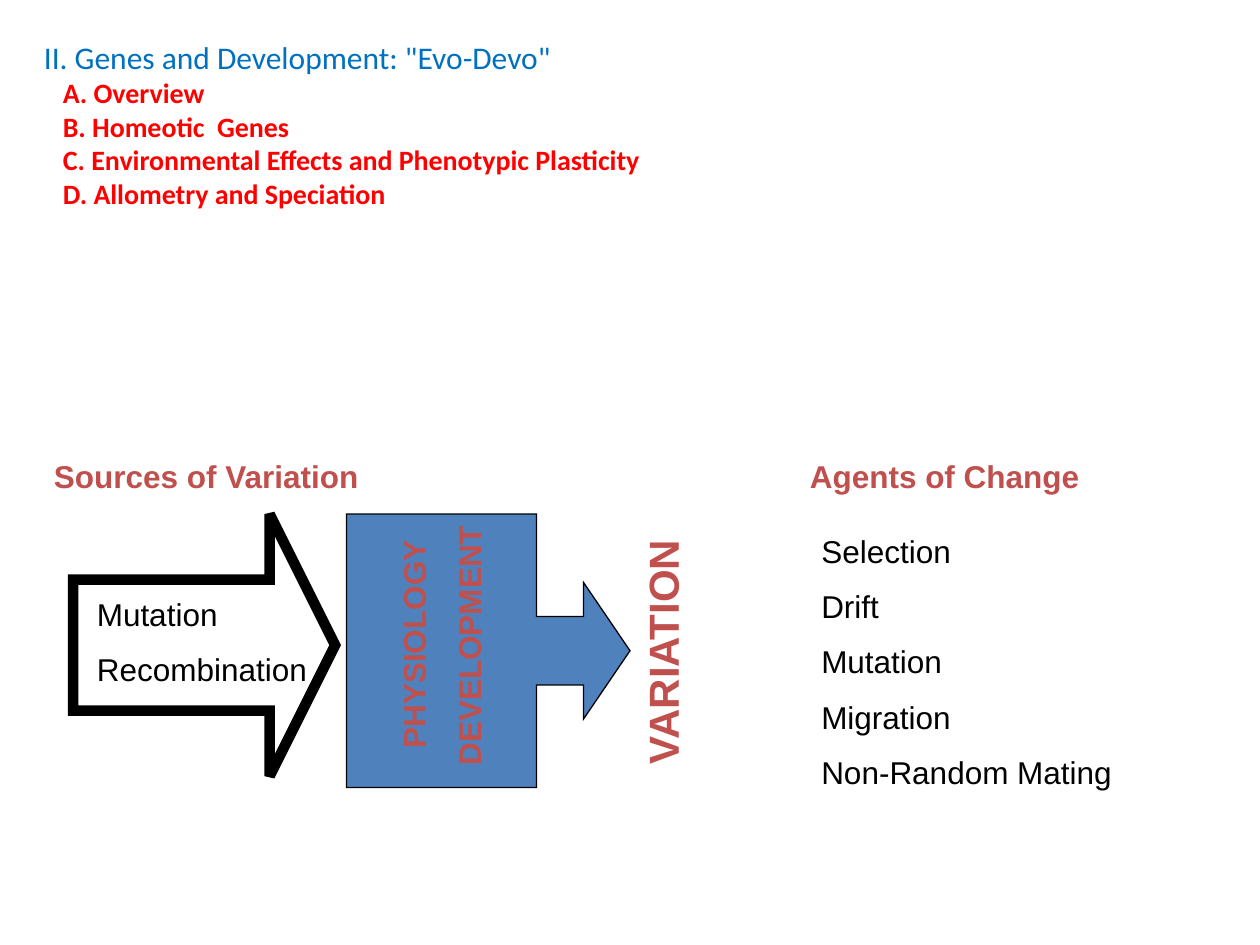
from lxml.etree import SubElement
from pptx import Presentation
from pptx.dml.color import RGBColor
from pptx.enum.shapes import MSO_SHAPE
from pptx.enum.text import PP_ALIGN
from pptx.oxml.ns import qn
from pptx.util import Inches, Pt

BLACK, RED, BRICK, BLUE, STEEL = "000000", "FF0000", "C0504D", "0070C0", "4F81BD"
OUTLINE_TITLE = 'II. Genes and Development: "Evo-Devo"'
OUTLINE_TOPICS = [
    "A. Overview",
    "B. Homeotic  Genes",
    "C. Environmental Effects and Phenotypic Plasticity",
    "D. Allometry and Speciation",
]
SOURCES = ["Mutation", "Recombination"]
PROCESSES = ["PHYSIOLOGY", "DEVELOPMENT"]
AGENTS = ["Selection", "Drift", "Mutation", "Migration", "Non-Random Mating"]

HEADING_TOP, DIAGRAM_TOP = 3.58, 4.08
HEADING = dict(color=BRICK, bold=True)


def color_of(value):
    return RGBColor.from_string(value)


def add_paragraph(frame, text, size=18, font="Arial", color=BLACK, bold=False,
                  gap=0, indent=0, align=None):
    first = not frame.paragraphs[0].runs
    para = frame.paragraphs[0] if first else frame.add_paragraph()
    para.alignment = align
    para.space_before = Pt(0 if first else gap)
    if indent:
        para._p.get_or_add_pPr().set("marL", str(Inches(indent)))
    span = para.add_run()
    span.text = text
    span.font.size, span.font.name, span.font.bold = Pt(size), font, bold
    span.font.color.rgb = color_of(color)


def add_text(page, place, lines, rotation=0, **style):
    box = page.shapes.add_textbox(*map(Inches, place))
    box.rotation = rotation
    box.text_frame.word_wrap = True
    for line in lines:
        add_paragraph(box.text_frame, line, gap=10, **style)
    return box.text_frame


def add_arrow(page, kind, place, adjustments, width, fill=None):
    arrow = page.shapes.add_shape(kind, *map(Inches, place))
    arrow.shadow.inherit = False
    for index, value in enumerate(adjustments):
        arrow.adjustments[index] = value
    if fill:
        arrow.fill.solid()
        arrow.fill.fore_color.rgb = color_of(fill)
    else:
        arrow.fill.background()
    arrow.line.color.rgb = color_of(BLACK)
    arrow.line.width = Pt(width)
    SubElement(arrow.line._get_or_add_ln(), qn("a:miter"), lim="800000")


def main():
    deck = Presentation()
    deck.slide_width, deck.slide_height = Inches(10), Inches(7.5)
    page = deck.slides.add_slide(deck.slide_layouts[6])

    add_text(page, (0.33, HEADING_TOP, 2.75, 0.4), ["Sources of Variation"], **HEADING)
    add_text(page, (6.33, HEADING_TOP, 2.83, 0.4), ["Agents of Change"], **HEADING)
    add_text(page, (0.67, 4.67, 2.25, 0.85), SOURCES)
    add_text(page, (6.42, 4.17, 2.83, 2.21), AGENTS)
    add_text(page, (4.13, 4.79, 2.25, 0.5), ["VARIATION"], rotation=270, size=24, **HEADING)

    add_arrow(page, MSO_SHAPE.RIGHT_ARROW_CALLOUT, (2.75, DIAGRAM_TOP, 2.25, 2.17),
              (0.25, 0.25, 0.17, 0.67), 0.75, fill=STEEL)
    processes = add_text(page, (2.38, 4.7, 2.25, 0.85), PROCESSES, rotation=270, **HEADING)
    processes.paragraphs[0]._p.get_or_add_pPr().set("marL", str(Inches(0.21)))
    processes.paragraphs[1].alignment = PP_ALIGN.CENTER
    add_arrow(page, MSO_SHAPE.RIGHT_ARROW, (0.58, DIAGRAM_TOP, 2.08, 2.08), (0.5, 0.25), 6)

    outline = add_text(page, (0.25, 0.25, 9.08, 1.48), [OUTLINE_TITLE],
                       font="Calibri", color=BLUE)
    for topic in OUTLINE_TOPICS:
        add_paragraph(outline, topic, size=16, font="Calibri", color=RED,
                      bold=True, indent=0.15)

    deck.save("out.pptx")


if __name__ == "__main__":
    main()
